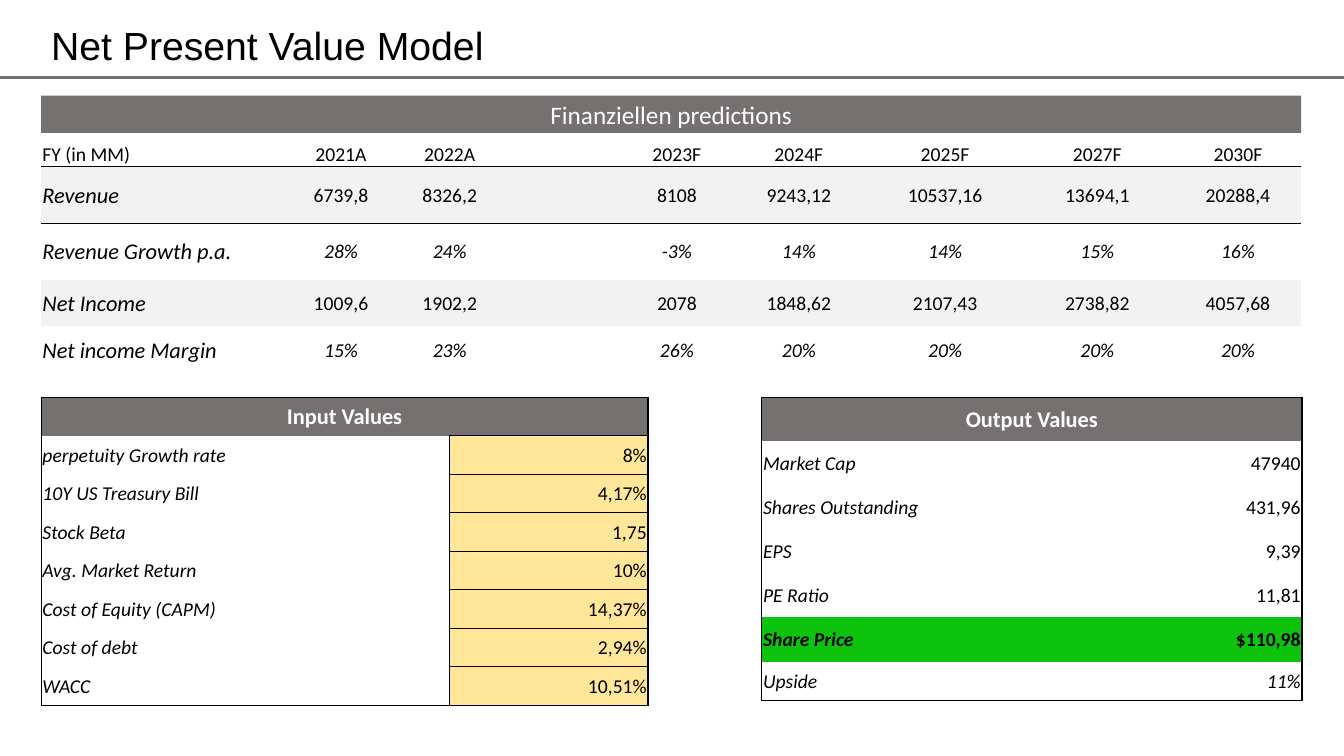
from dataclasses import dataclass

from lxml import etree
from pptx import Presentation, util as u
from pptx.dml.color import RGBColor
from pptx.enum import shapes, text
from pptx.oxml import ns


@dataclass(frozen=True)
class Theme:
    ink: str = "000000"
    white: str = "FFFFFF"
    grey: str = "767171"
    head: str = "757171"
    band: str = "F2F2F2"
    input: str = "FFE699"
    price: str = "0DC30D"
    font: str = "Calibri"
    title: int = 28
    banner: int = 18
    label: int = 16
    body: int = 14


THEME = Theme()
PLAIN = "{2D5ABB26-0587-4C30-8999-92F81FD0307C}"
LEFT, WIDE = 1.04, 31.75
ALIGN = text.PP_ALIGN

FORECAST = [
    ["FY (in MM)", "2021A", "2022A", "", "2023F", "2024F", "2025F", "2027F", "2030F"],
    ["Revenue", "6739,8", "8326,2", "", "8108", "9243,12", "10537,16", "13694,1", "20288,4"],
    ["Revenue Growth p.a.", "28%", "24%", "", "-3%", "14%", "14%", "15%", "16%"],
    ["Net Income", "1009,6", "1902,2", "", "2078", "1848,62", "2107,43", "2738,82", "4057,68"],
    ["Net income Margin", "15%", "23%", "", "26%", "20%", "20%", "20%", "20%"],
]
INPUTS = [
    ["Input Values", ""],
    ["perpetuity Growth rate", "8%"],
    ["10Y US Treasury Bill", "4,17%"],
    ["Stock Beta", "1,75"],
    ["Avg. Market Return", "10%"],
    ["Cost of Equity (CAPM)", "14,37%"],
    ["Cost of debt", "2,94%"],
    ["WACC", "10,51%"],
]
OUTPUTS = [
    ["Output Values", ""],
    ["Market Cap", "47940"],
    ["Shares Outstanding", "431,96"],
    ["EPS", "9,39"],
    ["PE Ratio", "11,81"],
    ["Share Price", "$110,98"],
    ["Upside", "11%"],
]


def box(x, y, w, h):
    return [u.Cm(n) for n in (x, y, w, h)]


def tint(fill, tone):
    fill.solid()
    fill.fore_color.rgb = RGBColor.from_string(tone)


def write(frame, words, size, tone=THEME.ink, align=ALIGN.LEFT, **form):
    para = frame.paragraphs[0]
    para.alignment = align
    if not words:
        end = etree.SubElement(para._p, ns.qn("a:endParaRPr"))
        end.set("sz", str(size * 100))
        return para
    run = para.add_run()
    run.text = words
    form = {"name": THEME.font, "size": u.Pt(size), **form}
    for key, value in form.items():
        setattr(run.font, key, value)
    run.font.color.rgb = RGBColor.from_string(tone)
    return para


def edge(cell, sides):
    props = cell._tc.get_or_add_tcPr()
    drawn = [side for side in "LRTB" if side in sides]
    for spot, side in enumerate(drawn):
        line = etree.Element(ns.qn("a:ln" + side), w=str(u.Pt(1)))
        fill = etree.SubElement(line, ns.qn("a:solidFill"))
        etree.SubElement(fill, ns.qn("a:srgbClr"), val=THEME.ink)
        props.insert(spot, line)


def title(slide):
    frame = slide.shapes.add_textbox(*box(LEFT, 0.46, WIDE, 1.5)).text_frame
    frame.word_wrap = True
    frame.vertical_anchor = text.MSO_ANCHOR.MIDDLE
    para = write(frame, "Net Present Value Model", THEME.title, name="Arial")
    para.line_spacing = 0.9


def rule(slide, width):
    y = u.Cm(1.96)
    line = slide.shapes.add_connector(shapes.MSO_CONNECTOR.STRAIGHT, 0, y, width, y)
    line.line.width = u.Pt(2.25)
    line.line.color.rgb = RGBColor.from_string(THEME.grey)
    etree.SubElement(line._element.spPr, ns.qn("a:effectLst"))


def banner(slide):
    bar = slide.shapes.add_shape(shapes.MSO_SHAPE.RECTANGLE, *box(LEFT, 2.41, WIDE, 0.94))
    bar.shadow.inherit = False
    tint(bar.fill, THEME.grey)
    bar.line.fill.background()
    bar.text_frame.vertical_anchor = text.MSO_ANCHOR.MIDDLE
    write(bar.text_frame, "Finanziellen predictions", THEME.banner, THEME.white, ALIGN.CENTER)


def grid(slide, x, y, cols, rows, data, style):
    place = box(x, y, sum(cols), sum(rows))
    table = slide.shapes.add_table(len(rows), len(cols), *place).table
    table.first_row = table.horz_banding = False
    table._tbl.tblPr[0].text = PLAIN
    for col, width in zip(table.columns, cols):
        col.width = u.Cm(width)
    for row, height in zip(table.rows, rows):
        row.height = u.Cm(height)
    pads = {"margin_left": 0.03, "margin_right": 0.03, "margin_top": 0.03, "margin_bottom": 0}
    for r, line in enumerate(data):
        for c, words in enumerate(line):
            cell = table.cell(r, c)
            for key, pad in pads.items():
                setattr(cell, key, u.Cm(pad))
            cell.vertical_anchor = text.MSO_ANCHOR.MIDDLE
            fill, sides, form = style(r, c)
            write(cell.text_frame, words, **form)
            if fill:
                tint(cell.fill, fill)
            edge(cell, sides)
    return table


def year(r, c):
    label = r > 0 and c == 0
    form = {
        "size": THEME.label if label else THEME.body,
        "align": ALIGN.CENTER if c else ALIGN.LEFT,
        "italic": label or r in (2, 4),
    }
    return THEME.band if r in (1, 3) else None, {0: "B", 1: "T"}.get(r, ""), form


def head():
    form = {"size": THEME.label, "tone": THEME.white, "align": ALIGN.CENTER, "bold": True}
    return THEME.head, "LRT", form


def pair(c):
    return {"size": THEME.body, "align": ALIGN.RIGHT if c else ALIGN.LEFT, "italic": c == 0}


def entry(r, c):
    if r == 0:
        return head()
    if c:
        return THEME.input, "LRTB", pair(c)
    return None, "LRB" if r == len(INPUTS) - 1 else "LR", pair(c)


def result(r, c):
    if r == 0:
        return head()
    last, price = r == len(OUTPUTS) - 1, OUTPUTS[r][0] == "Share Price"
    form = {**pair(c), "bold": price, "italic": c == 0 or last}
    return THEME.price if price else None, "LR"[c] + "B" * last, form


def panel(slide, x, first, rows, data, style):
    table = grid(slide, x, 10.01, [first, 5], rows, data, style)
    table.cell(0, 0).merge(table.cell(0, 1))


def main():
    deck = Presentation()
    deck.slide_width, deck.slide_height = u.Cm(33.87), u.Cm(19.05)
    slide = deck.slides.add_slide(deck.slide_layouts[6])
    rule(slide, deck.slide_width)
    title(slide)
    cols = [6.3, 2.51, 2.97, 2.97, 2.54, 3.61, 3.76, 3.91, 3.18]
    grid(slide, LEFT, 3.58, cols, [0.58, 1.42, 1.42, 1.17, 1.24], FORECAST, year)
    panel(slide, LEFT, 10.29, [0.97] * len(INPUTS), INPUTS, entry)
    panel(slide, 19.2, 8.61, [1.11] * 6 + [0.98], OUTPUTS, result)
    banner(slide)
    deck.save("out.pptx")


if __name__ == "__main__":
    main()
